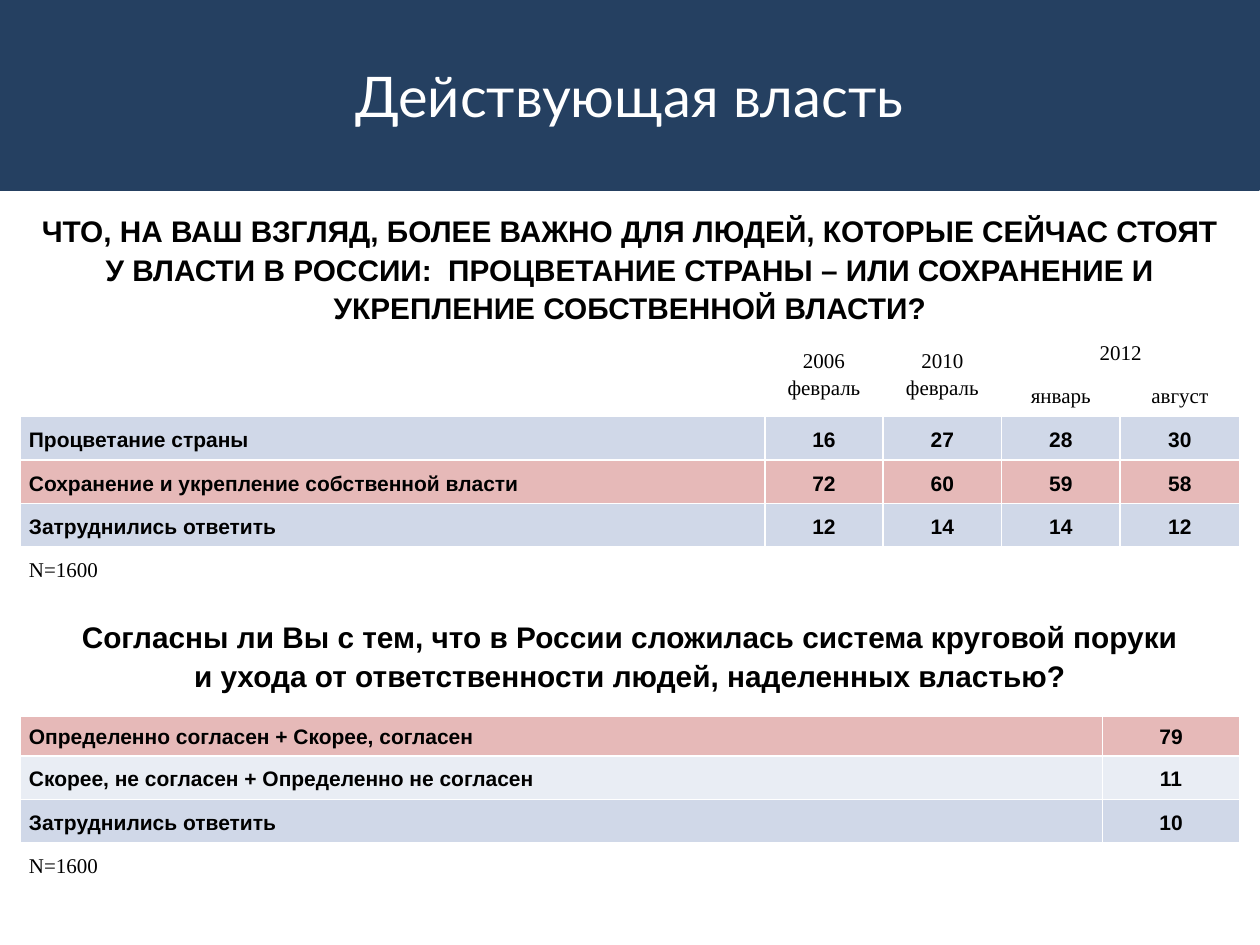
from dataclasses import dataclass

import lxml.etree
import pptx
import pptx.dml.color
import pptx.enum.shapes
import pptx.enum.text
import pptx.oxml.ns
import pptx.util

Inches, Pt = pptx.util.Inches, pptx.util.Pt
ALIGN = pptx.enum.text.PP_ALIGN
MIDDLE = pptx.enum.text.MSO_ANCHOR.MIDDLE
qn = pptx.oxml.ns.qn

COLORS = {
    "navy": "254061",
    "white": "FFFFFF",
    "black": "000000",
    "blue": "D0D8E8",
    "pink": "E6B9B8",
    "pale": "E9EDF4",
}


@dataclass
class TextStyle:
    font: str
    size: float
    bold: bool = False
    color: str = "black"
    line_spacing: float = 1.15
    before: float = 0
    after: float = 0


@dataclass
class Answer:
    label: str
    values: list[int]
    fill: str


@dataclass
class Survey:
    top: float
    question: str
    question_inset: float
    columns: list[float]
    rows: list[float]
    answers: list[Answer]
    first_answer: int


TITLE = TextStyle("Lato", 32, color="white", line_spacing=1)
QUESTION = TextStyle("Arial", 17, bold=True)
ANSWER = TextStyle("Arial", 12, bold=True, before=2, after=3)
NOTE = TextStyle("Times New Roman", 12)

POWER = Survey(
    top=1.64,
    question="ЧТО, НА ВАШ ВЗГЛЯД, БОЛЕЕ ВАЖНО ДЛЯ ЛЮДЕЙ, КОТОРЫЕ СЕЙЧАС СТОЯТ "
             "У ВЛАСТИ В РОССИИ:  ПРОЦВЕТАНИЕ СТРАНЫ – ИЛИ СОХРАНЕНИЕ И "
             "УКРЕПЛЕНИЕ СОБСТВЕННОЙ ВЛАСТИ?",
    question_inset=0,
    columns=[5.91, 0.94, 0.94, 0.94, 0.95],
    rows=[0.92] + [0.345] * 6,
    answers=[
        Answer("Процветание страны", [16, 27, 28, 30], "blue"),
        Answer("Сохранение и укрепление собственной власти", [72, 60, 59, 58], "pink"),
        Answer("Затруднились ответить", [12, 14, 14, 12], "blue"),
    ],
    first_answer=3,
)
IMPUNITY = Survey(
    top=4.61,
    question="Согласны ли Вы с тем, что в России сложилась система круговой поруки\n"
             "и ухода от ответственности людей, наделенных властью?",
    question_inset=0.12,
    columns=[8.59, 1.09],
    rows=[1.06, 0.33] + [0.345] * 3,
    answers=[
        Answer("Определенно согласен + Скорее, согласен", [79], "pink"),
        Answer("Скорее, не согласен + Определенно не согласен", [11], "pale"),
        Answer("Затруднились ответить", [10], "blue"),
    ],
    first_answer=1,
)


def rgb(name: str) -> pptx.dml.color.RGBColor:
    return pptx.dml.color.RGBColor.from_string(COLORS[name])


def write(tf, text: str, style: TextStyle, align=ALIGN.CENTER) -> None:
    p = tf.paragraphs[0]
    p.text = text.replace("\n", "\v")
    p.alignment = align
    p.line_spacing = style.line_spacing
    p.space_before, p.space_after = Pt(style.before), Pt(style.after)
    p.font.name, p.font.size, p.font.bold = style.font, Pt(style.size), style.bold
    p.font.color.rgb = rgb(style.color)


def set_borders(cell, row: int) -> None:
    """White cell lines, heavier under the question row."""
    tcPr = cell._tc.get_or_add_tcPr()
    widths = {"lnL": 1, "lnR": 1, "lnT": 3 if row == 1 else 1, "lnB": 3 if row == 0 else 1}
    for tag, width in widths.items():
        ln = lxml.etree.SubElement(tcPr, qn(f"a:{tag}"), w=str(Pt(width)))
        fill = lxml.etree.SubElement(ln, qn("a:solidFill"))
        lxml.etree.SubElement(fill, qn("a:srgbClr"), val=COLORS["white"])


def add_survey(slide, survey: Survey):
    table = slide.shapes.add_table(
        len(survey.rows), len(survey.columns), Inches(0.16), Inches(survey.top),
        Inches(sum(survey.columns)), Inches(sum(survey.rows))).table
    table.first_row = table.horz_banding = False
    for column, width in zip(table.columns, survey.columns):
        column.width = Inches(width)

    # Common cell format
    for i, height in enumerate(survey.rows):
        table.rows[i].height = Inches(height)
        for cell in table.rows[i].cells:
            set_borders(cell, i)
            cell.fill.background()
            cell.vertical_anchor = MIDDLE
            cell.margin_left = cell.margin_right = Inches(0.07)
            cell.margin_top = cell.margin_bottom = 0

    # Question
    question = table.cell(0, 0)
    question.merge(table.cell(0, len(survey.columns) - 1))
    question.margin_top = Inches(survey.question_inset)
    write(question.text_frame, survey.question, QUESTION)

    # Answers
    for i, answer in enumerate(survey.answers, survey.first_answer):
        for j, value in enumerate([answer.label, *answer.values]):
            cell = table.cell(i, j)
            cell.fill.solid()
            cell.fill.fore_color.rgb = rgb(answer.fill)
            write(cell.text_frame, str(value), ANSWER, ALIGN.CENTER if j else ALIGN.LEFT)

    # Sample size
    last = len(survey.rows) - 1
    for cell in table.rows[last].cells:
        cell.fill.solid()
        cell.fill.fore_color.rgb = rgb("white")
    write(table.cell(last, 0).text_frame, "N=1600", NOTE, ALIGN.LEFT)
    return table


def add_dates(table) -> None:
    for j, text in enumerate(["2006\nфевраль", "2010\nфевраль", "2012"], 1):
        cell = table.cell(1, j)
        cell.merge(table.cell(1, 4) if j == 3 else table.cell(2, j))
        write(cell.text_frame, text, NOTE)
    for j, month in enumerate(["январь", "август"], 3):
        write(table.cell(2, j).text_frame, month, NOTE)


def main() -> None:
    prs = pptx.Presentation()
    prs.slide_width, prs.slide_height = Inches(10), Inches(7.5)
    s = prs.slides.add_slide(prs.slide_layouts[6])

    # Title band
    band = s.shapes.add_shape(pptx.enum.shapes.MSO_SHAPE.RECTANGLE,
                              0, 0, Inches(9.99), Inches(1.5))
    band.shadow.inherit = False
    band.fill.solid()
    band.fill.fore_color.rgb = band.line.color.rgb = rgb("navy")
    band.line.width = Pt(2)

    # Title
    tf = s.shapes.add_textbox(0, Inches(0.13), Inches(10), Inches(1.25)).text_frame
    tf.word_wrap = True
    tf.vertical_anchor = MIDDLE
    write(tf, "Действующая власть", TITLE)

    # Survey tables
    add_dates(add_survey(s, POWER))
    add_survey(s, IMPUNITY)

    prs.save("out.pptx")


if __name__ == "__main__":
    main()
